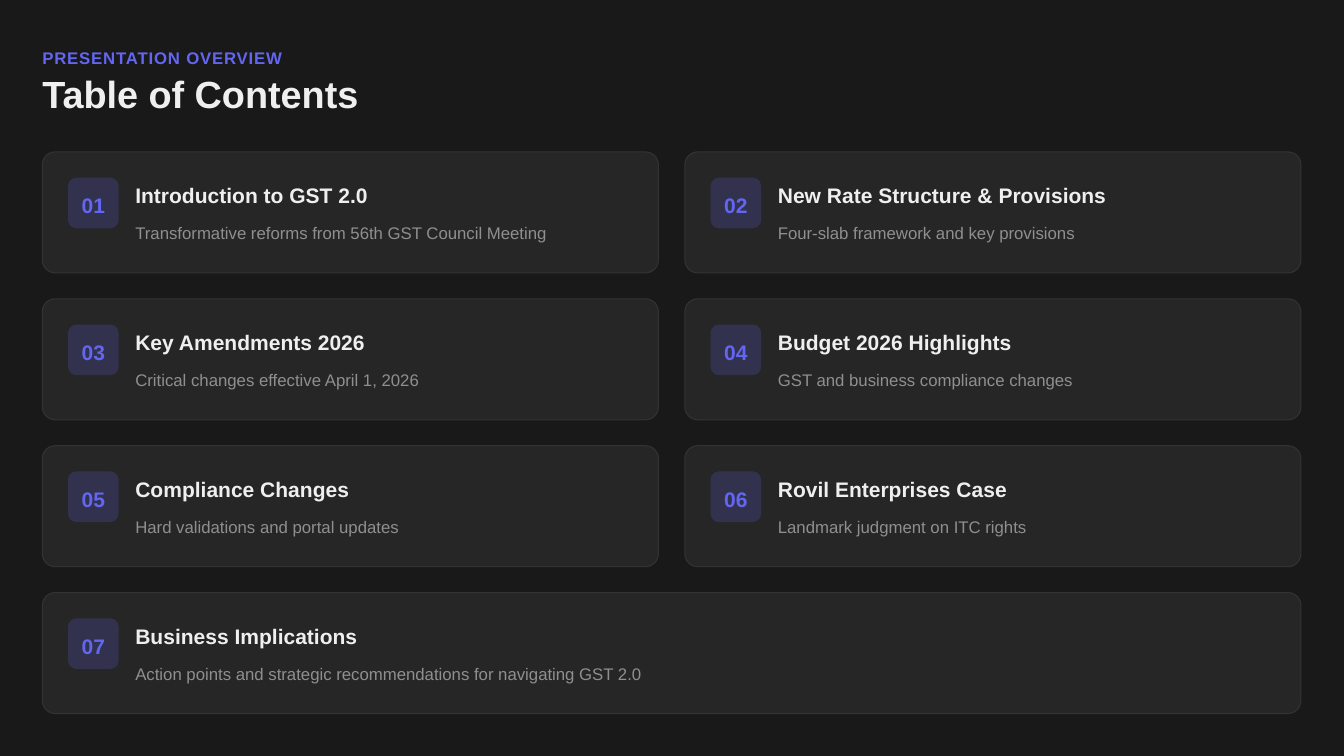
import pptx
import pptx.util
import pptx.dml.color
import pptx.enum.shapes
import pptx.enum.text
import pptx.oxml
import pptx.oxml.ns

Inches = pptx.util.Inches
Pt = pptx.util.Pt
RGBColor = pptx.dml.color.RGBColor
ALIGN = pptx.enum.text.PP_ALIGN

BACKGROUND = RGBColor(0x19, 0x19, 0x19)
CARD = RGBColor(0x26, 0x26, 0x26)
BORDER = RGBColor(0x33, 0x33, 0x33)
ACCENT = RGBColor(0x63, 0x66, 0xF1)
LIGHT = RGBColor(0xEF, 0xEF, 0xEF)
MUTED = RGBColor(0x8F, 0x8F, 0x8F)

LEFT, TOP = 0.56, 2.01
CARD_WIDTH, CARD_HEIGHT = 8.15, 1.6
COLUMN_STEP, ROW_STEP = 8.5, 1.943
PADDING, BADGE_SIZE = 0.34, 0.67

SECTIONS = [
    ("Introduction to GST 2.0", "Transformative reforms from 56th GST Council Meeting"),
    ("New Rate Structure & Provisions", "Four-slab framework and key provisions"),
    ("Key Amendments 2026", "Critical changes effective April 1, 2026"),
    ("Budget 2026 Highlights", "GST and business compliance changes"),
    ("Compliance Changes", "Hard validations and portal updates"),
    ("Rovil Enterprises Case", "Landmark judgment on ITC rights"),
    ("Business Implications",
     "Action points and strategic recommendations for navigating GST 2.0"),
]


def write(shape, text, size, color, bold, spacing, align=ALIGN.LEFT):
    frame = shape.text_frame
    frame.word_wrap = True
    frame.margin_left = frame.margin_right = 0
    frame.margin_top = frame.margin_bottom = 0
    frame.vertical_anchor = pptx.enum.text.MSO_ANCHOR.MIDDLE
    paragraph = frame.paragraphs[0]
    paragraph.alignment = align
    paragraph.line_spacing = spacing
    run = paragraph.add_run()
    run.text = text
    run.font.name = "Arial"
    run.font.size = Pt(size)
    run.font.bold = bold
    run.font.color.rgb = color
    return run


def add_rounded(x, y, width, height, radius, color):
    shape = slide.shapes.add_shape(
        pptx.enum.shapes.MSO_SHAPE.ROUNDED_RECTANGLE,
        Inches(x), Inches(y), Inches(width), Inches(height))
    shape.adjustments[0] = radius / height
    shape.shadow.inherit = False
    shape.fill.solid()
    shape.fill.fore_color.rgb = color
    return shape


deck = pptx.Presentation()
deck.slide_width = Inches(17.78)
deck.slide_height = Inches(10)
slide = deck.slides.add_slide(deck.slide_layouts[6])
slide.background.fill.solid()
slide.background.fill.fore_color.rgb = BACKGROUND

overline = slide.shapes.add_textbox(Inches(LEFT), Inches(0.56), Inches(16.78), Inches(0.33))
overline_run = write(overline, "PRESENTATION OVERVIEW", 16, ACCENT, True, 1.3)
overline_run.font._element.set("spc", "80")

heading = slide.shapes.add_textbox(Inches(LEFT), Inches(1), Inches(16.92), Inches(0.56))
write(heading, "Table of Contents", 36, LIGHT, True, 0.9)

for index, (title, summary) in enumerate(SECTIONS):
    row, column = divmod(index, 2)
    x = LEFT + column * COLUMN_STEP
    y = TOP + row * ROW_STEP
    is_last = index == len(SECTIONS) - 1
    width = CARD_WIDTH + COLUMN_STEP if is_last else CARD_WIDTH

    card = add_rounded(x, y, width, CARD_HEIGHT, 0.17, CARD)
    card.line.color.rgb = BORDER
    card.line.width = Pt(1)

    badge = add_rounded(x + PADDING, y + PADDING, BADGE_SIZE, BADGE_SIZE, 0.11, ACCENT)
    badge.line.fill.background()
    badge_color = badge.fill._xPr.find(".//" + pptx.oxml.ns.qn("a:srgbClr"))
    alpha = pptx.oxml.parse_xml(f'<a:alpha {pptx.oxml.ns.nsdecls("a")} val="20000"/>')
    badge_color.append(alpha)
    write(badge, f"{index + 1:02d}", 20, ACCENT, True, 1.2, ALIGN.CENTER)

    title_box = slide.shapes.add_textbox(
        Inches(x + 1.23), Inches(y + PADDING), Inches(width - 1.43), Inches(0.39))
    write(title_box, title, 20, LIGHT, True, 1.2)
    summary_box = slide.shapes.add_textbox(
        Inches(x + 1.23), Inches(y + 0.84), Inches(width - 1.46), Inches(0.36))
    write(summary_box, summary, 16, MUTED, False, 1.4)

deck.save("out.pptx")
